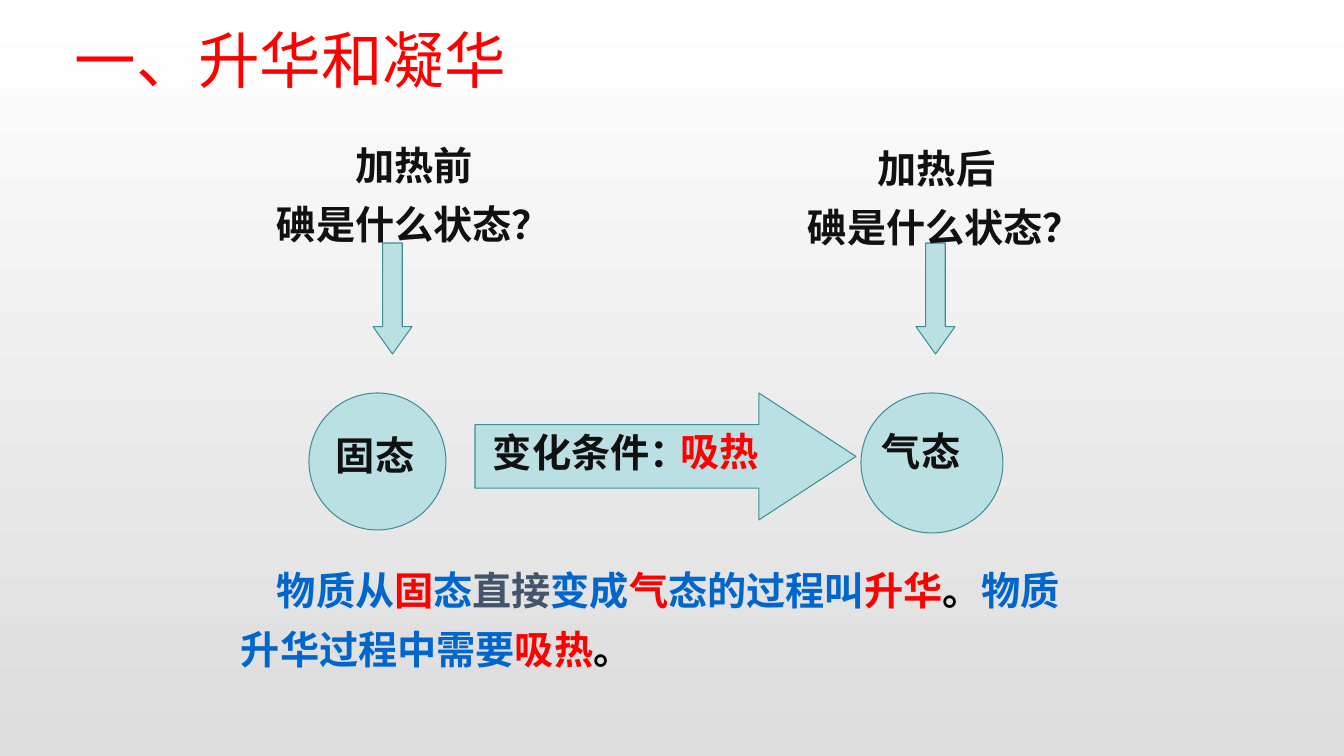
"""Build the slide on sublimation and deposition of iodine."""
import pptx
import pptx.dml.color
import pptx.enum.shapes
import pptx.enum.text
import pptx.util
from lxml import etree

PX = 12192000 / 1344
FONT = "Noto Sans CJK SC"
INK, RED, BLUE, SLATE = "111111", "FF0000", "0066CC", "44546A"
MSO = pptx.enum.shapes.MSO_SHAPE
A = "http://schemas.openxmlformats.org/drawingml/2006/main"
rgb = pptx.dml.color.RGBColor.from_string


def add_text(shapes, box, lines, size=28, bold=True, align=None, spacing=None):
    tb = shapes.add_textbox(*[round(v * PX) for v in box])
    tf = tb.text_frame
    tf.word_wrap = True
    for i, runs in enumerate(lines):
        p = tf.paragraphs[0] if i == 0 else tf.add_paragraph()
        p.alignment = align
        p.line_spacing = spacing
        for words, color in runs:
            r = p.add_run()
            r.text = words
            r.font.size = pptx.util.Pt(size)
            r.font.bold = bold
            r.font.name = FONT
            r.font.color.rgb = rgb(color)
            etree.SubElement(r.font._element, f"{{{A}}}ea", typeface=FONT)
    return tf


def add_shape(shapes, kind, box, head=None):
    sp = shapes.add_shape(kind, *[round(v * PX) for v in box])
    sp.shadow.inherit = False
    sp.fill.solid()
    sp.fill.fore_color.rgb = rgb("BBE0E3")
    sp.line.color.rgb = rgb("3D8F95")
    sp.line.width = pptx.util.Pt(0.75)
    if head:
        sp.adjustments[0] = 0.5
        sp.adjustments[1] = head


prs = pptx.Presentation()
prs.slide_width = round(1344 * PX)
prs.slide_height = round(756 * PX)
s = prs.slides.add_slide(prs.slide_layouts[6])

fill = s.background.fill
fill.gradient()
fill.gradient_angle = 270
for stop, position, color in zip(fill.gradient_stops, (0, 1), ("FFFFFF", "DCDCDC")):
    stop.position = position
    stop.color.rgb = rgb(color)

conclusion = [
    ("物质从", BLUE), ("固", RED), ("态", BLUE), ("直接", SLATE), ("变成", BLUE),
    ("气", RED), ("态的过程叫", BLUE), ("升华", RED), ("。", "000000"),
    ("物质升华过程中需要", BLUE), ("吸热", RED), ("。", "000000"),
]
tf = add_text(s.shapes, (231, 550, 851, 129), [conclusion], spacing=1.25)
tf.paragraphs[0]._p.get_or_add_pPr().set("indent", str(round(36 * PX)))

questions = [
    ("加热前", (239, 125, 350, 129), 373, 0),
    ("加热后", (746, 128, 381, 129), 916, 17),
]
for moment, box, arrow_x, margin in questions:
    add_shape(s.shapes, MSO.DOWN_ARROW, (arrow_x, 243, 39, 111), 0.7)
    tf = add_text(s.shapes, box, [[(moment, INK)], [("碘是什么状态？", INK)]],
                  align=pptx.enum.text.PP_ALIGN.CENTER, spacing=1.25)
    tf.paragraphs[1]._p.get_or_add_pPr().set("marL", str(round(margin * PX)))

steps = [
    ("固态", MSO.OVAL, (309, 393, 137, 137), (326, 426, 156, 57), None),
    ("气态", MSO.OVAL, (861, 393, 142, 140), (872, 422, 148, 57), None),
    ("变化条件：", MSO.RIGHT_ARROW, (475, 393, 381, 127), (483, 423, 264, 57), 0.765),
]
for label, kind, box, label_box, head in steps:
    group = s.shapes.add_group_shape()
    add_shape(group.shapes, kind, box, head)
    add_text(group.shapes, label_box, [[(label, INK)]])

add_text(s.shapes, (671, 422, 152, 57), [[("吸热", RED)]])
add_text(s.shapes, (65, 17, 511, 85), [[("一、升华和凝华", RED)]], size=44, bold=False)

prs.save("out.pptx")
